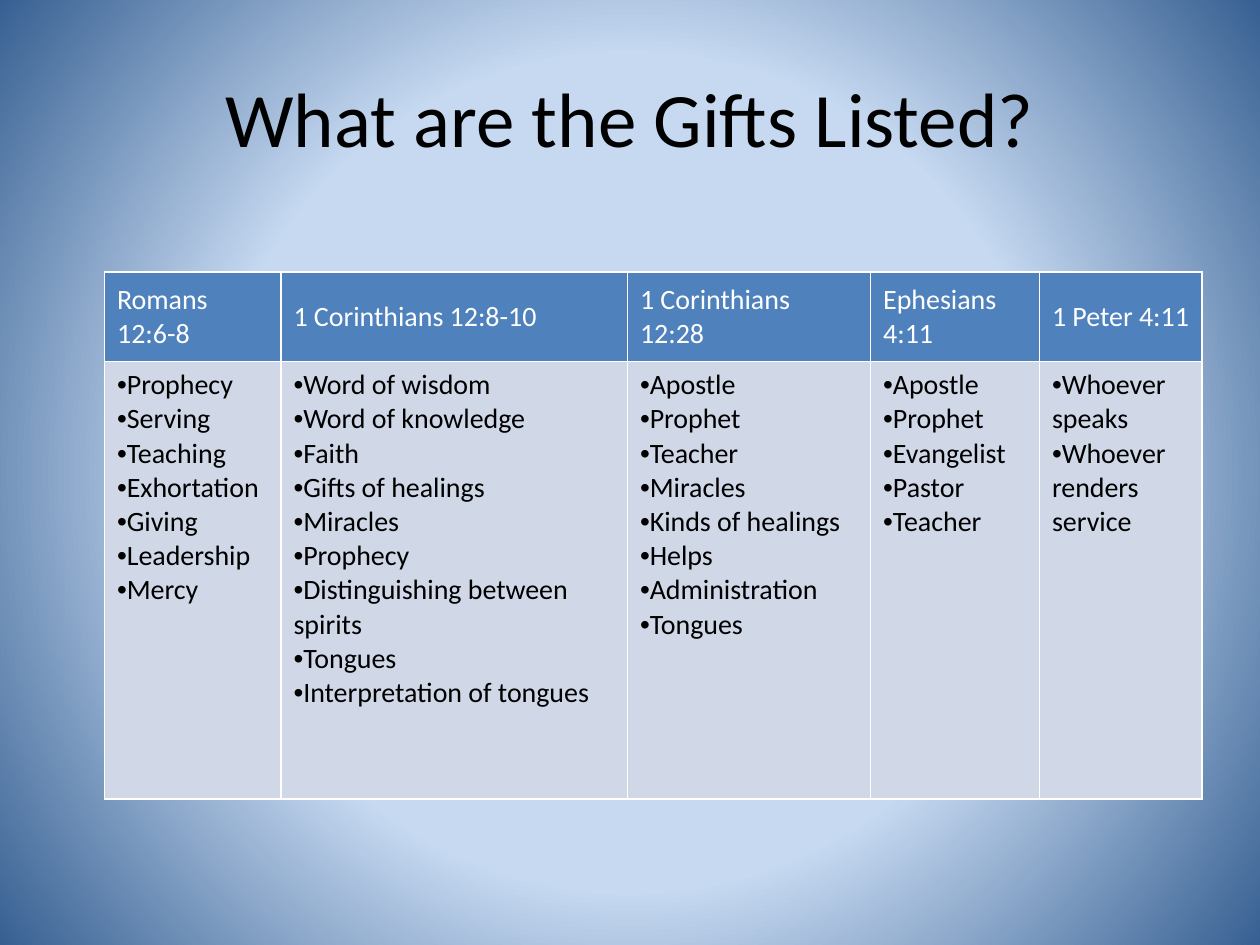
import dataclasses

import lxml.etree
import pptx
import pptx.dml.color
import pptx.enum.text
import pptx.oxml.ns
import pptx.util

Inches = pptx.util.Inches
Pt = pptx.util.Pt
qn = pptx.oxml.ns.qn
SubElement = lxml.etree.SubElement

FONT = "Calibri"
BULLET_FONT = "Arial"
COLORS = {
    "glow": "C6D9F1",
    "edge": "376092",
    "header": "4F81BD",
    "body": "D0D8E8",
    "light": "FFFFFF",
    "dark": "000000",
}


@dataclasses.dataclass
class Passage:
    reference: str
    width: float
    gifts: list[str]


PASSAGES = [
    Passage("Romans 12:6-8", 1.4, [
        "Prophecy", "Serving", "Teaching", "Exhortation", "Giving",
        "Leadership", "Mercy"]),
    Passage("1 Corinthians 12:8-10", 2.75, [
        "Word of wisdom", "Word of knowledge", "Faith", "Gifts of healings",
        "Miracles", "Prophecy", "Distinguishing between spirits", "Tongues",
        "Interpretation of tongues"]),
    Passage("1 Corinthians 12:28", 1.93, [
        "Apostle", "Prophet", "Teacher", "Miracles", "Kinds of healings",
        "Helps", "Administration", "Tongues"]),
    Passage("Ephesians 4:11", 1.34, [
        "Apostle", "Prophet", "Evangelist", "Pastor", "Teacher"]),
    Passage("1 Peter 4:11", 1.29, [
        "Whoever speaks", "Whoever renders service"]),
]
ROW_HEIGHTS = [0.71, 3.47]


def rgb(name: str) -> pptx.dml.color.RGBColor:
    return pptx.dml.color.RGBColor.from_string(COLORS[name])


def add_run(paragraph, text: str, size: float, color: str) -> None:
    run = paragraph.add_run()
    run.text = text
    run.font.name = FONT
    run.font.size = Pt(size)
    run.font.color.rgb = rgb(color)


def add_bullet(paragraph) -> None:
    properties = paragraph._p.get_or_add_pPr()
    SubElement(properties, qn("a:buFont"), typeface=BULLET_FONT)
    SubElement(properties, qn("a:buChar"), char="•")


def paint_background(slide) -> None:
    slide.background.fill.gradient()
    gradient = slide.element.find(".//" + qn("a:gradFill"))
    for child in list(gradient):
        gradient.remove(child)
    stops = SubElement(gradient, qn("a:gsLst"))
    for percent, color in [(0, "glow"), (53, "glow"), (100, "edge")]:
        stop = SubElement(stops, qn("a:gs"), pos=str(percent * 1000))
        SubElement(stop, qn("a:srgbClr"), val=COLORS[color])
    circle = SubElement(gradient, qn("a:path"), path="circle")
    SubElement(circle, qn("a:fillToRect"), l="50000", t="50000", r="50000", b="50000")


def style_cell(cell, fill: str, anchor) -> None:
    cell.vertical_anchor = anchor
    properties = cell._tc.get_or_add_tcPr()
    for side in ("lnL", "lnR", "lnT", "lnB"):
        border = SubElement(properties, qn(f"a:{side}"), w=str(Pt(1)))
        solid = SubElement(border, qn("a:solidFill"))
        SubElement(solid, qn("a:srgbClr"), val=COLORS["light"])
    cell.fill.solid()
    cell.fill.fore_color.rgb = rgb(fill)


def fill_column(table, index: int, passage: Passage) -> None:
    table.columns[index].width = Inches(passage.width)

    heading = table.cell(0, index)
    style_cell(heading, "header", pptx.enum.text.MSO_ANCHOR.MIDDLE)
    add_run(heading.text_frame.paragraphs[0], passage.reference, 16, "light")

    listing = table.cell(1, index)
    style_cell(listing, "body", pptx.enum.text.MSO_ANCHOR.TOP)
    frame = listing.text_frame
    for position, gift in enumerate(passage.gifts):
        paragraph = frame.add_paragraph() if position else frame.paragraphs[0]
        add_bullet(paragraph)
        add_run(paragraph, gift, 16, "dark")


def add_gifts_table(slide) -> None:
    width = sum(passage.width for passage in PASSAGES)
    table = slide.shapes.add_table(
        len(ROW_HEIGHTS), len(PASSAGES), Inches(0.83), Inches(2.16),
        Inches(width), Inches(sum(ROW_HEIGHTS))).table
    table.first_row = False
    table.horz_banding = False
    for row, height in zip(table.rows, ROW_HEIGHTS):
        row.height = Inches(height)
    for index, passage in enumerate(PASSAGES):
        fill_column(table, index, passage)


def add_title(slide) -> None:
    title = slide.shapes.title
    title.left, title.top = Inches(0.5), Inches(0.3)
    title.width, title.height = Inches(9), Inches(1.25)
    title.text_frame.vertical_anchor = pptx.enum.text.MSO_ANCHOR.MIDDLE
    paragraph = title.text_frame.paragraphs[0]
    paragraph.alignment = pptx.enum.text.PP_ALIGN.CENTER
    add_run(paragraph, "What are the Gifts Listed?", 44, "dark")


def main() -> None:
    presentation = pptx.Presentation()
    presentation.slide_width = Inches(10)
    presentation.slide_height = Inches(7.5)
    slide = presentation.slides.add_slide(presentation.slide_layouts[5])
    paint_background(slide)
    add_title(slide)
    add_gifts_table(slide)
    presentation.save("out.pptx")


if __name__ == "__main__":
    main()
